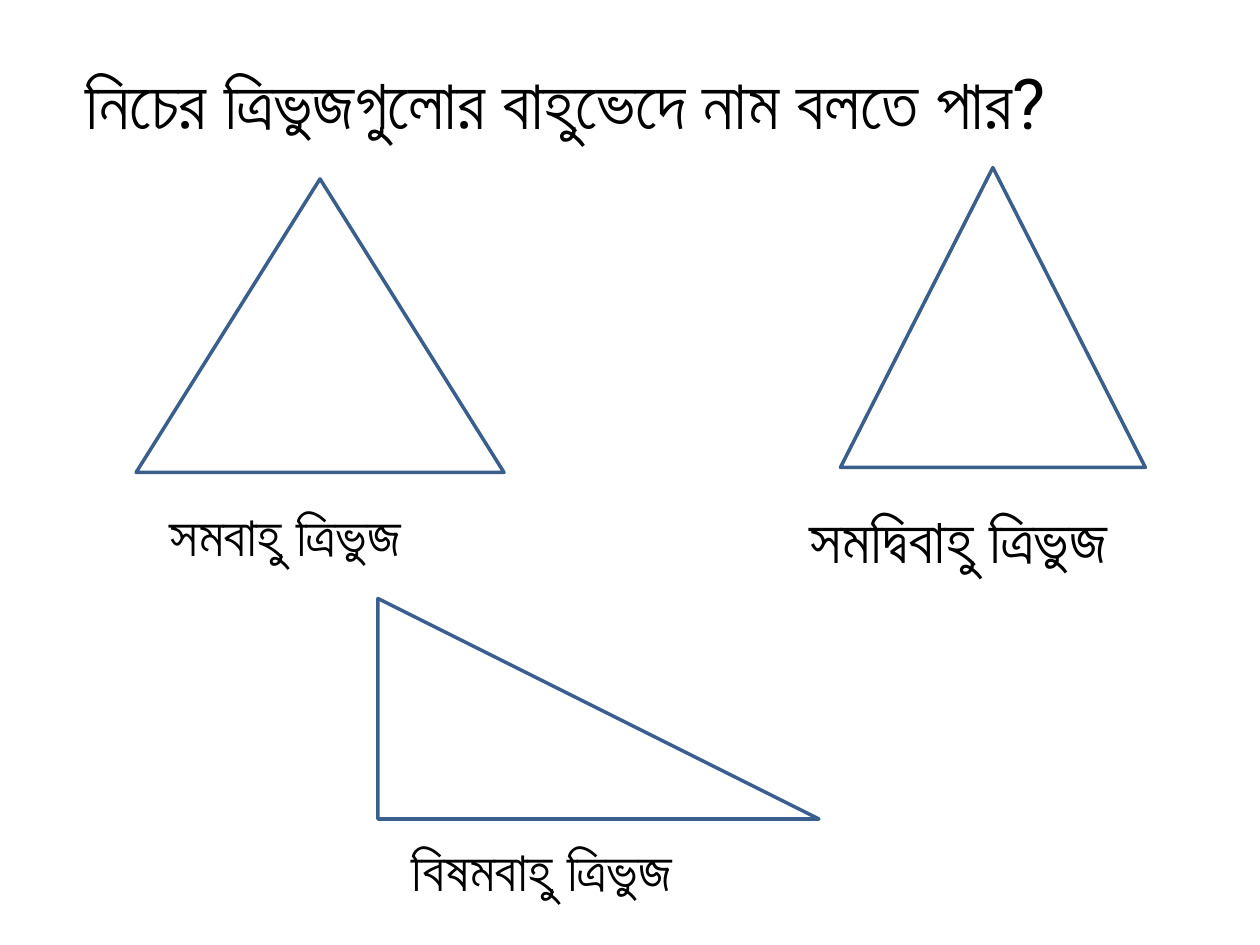
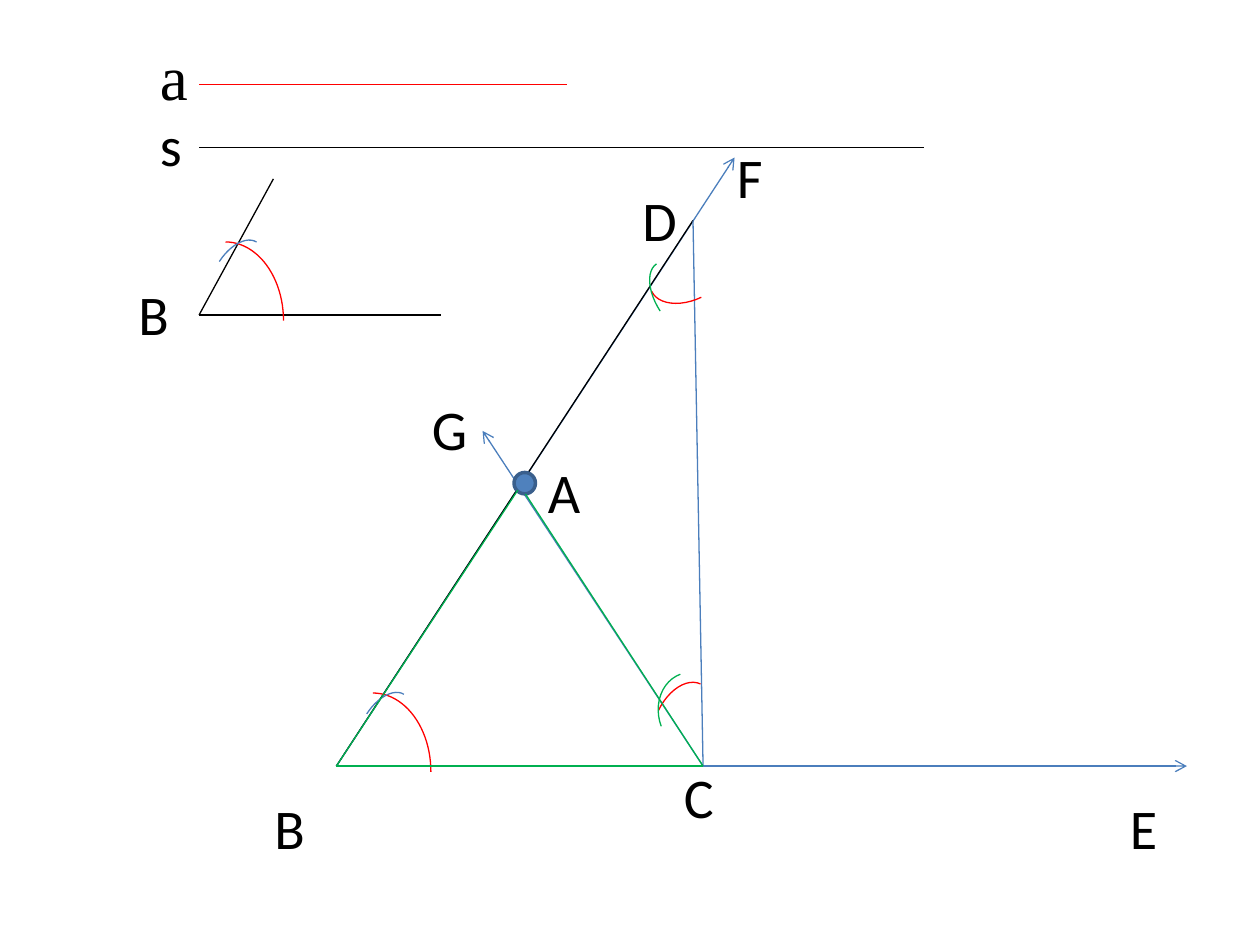
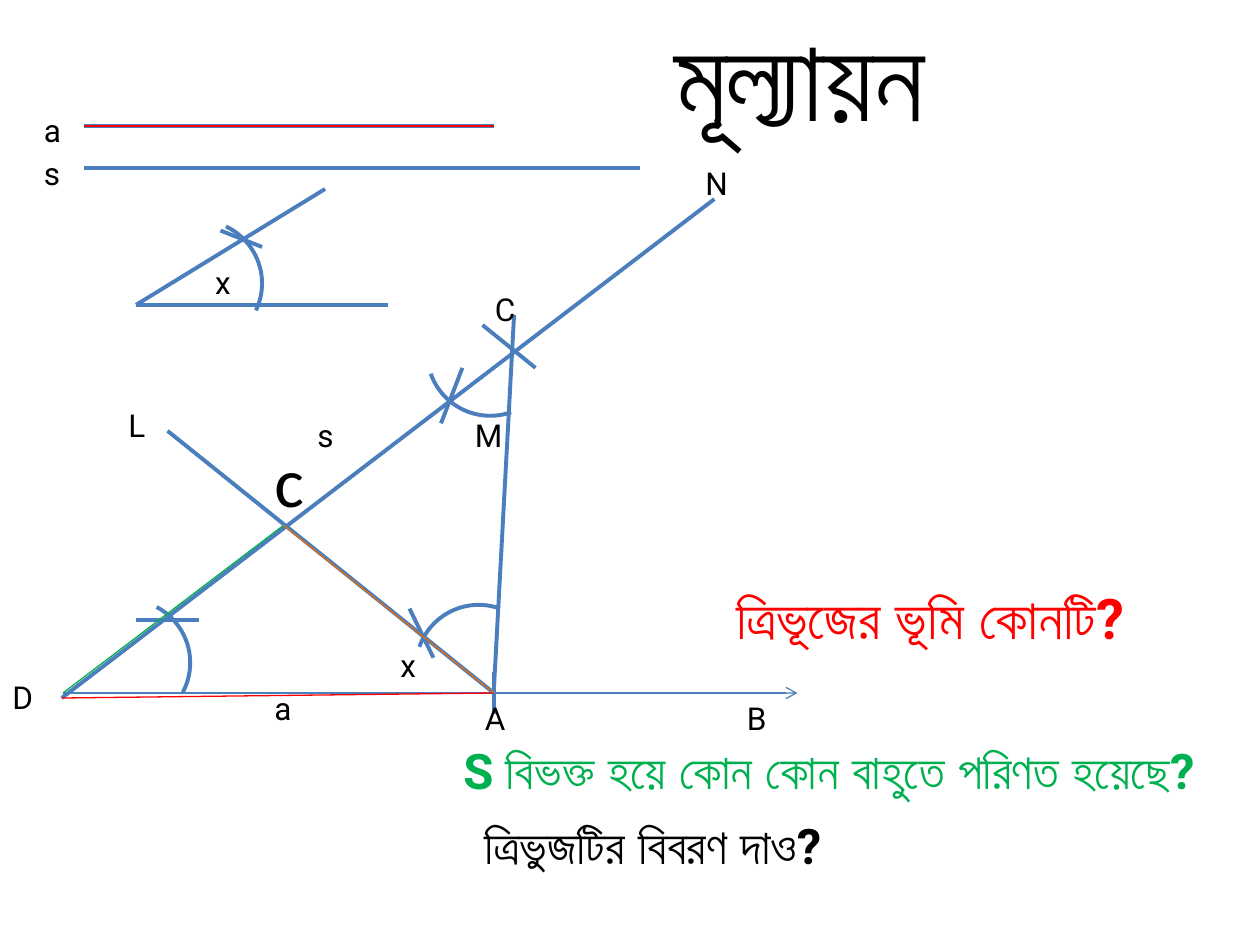
from lxml import etree
from pptx import Presentation
from pptx.dml.color import RGBColor
from pptx.enum import shapes, text
from pptx.oxml.ns import qn
from pptx.util import Inches, Pt


class Theme:
    black, white, red = "000000", "FFFFFF", "FF0000"
    green, orange = "00B050", "E46C0A"
    blue, edge, dot = "4B7EBC", "3A5F8C", "4F81BD"
    thin, mid, thick = 0.75, 2, 2.25
    small, note, label, name, head, big = 18, 28, 32, 36, 40, 66
    sans, plain, serif = "Roboto", "Calibri", "Times New Roman"


T = Theme
KIND = shapes.MSO_SHAPE

# Slide 1: triangles as kind, box; names as text, box, size
NAMES_TITLE = ("নিচের ত্রিভুজগুলোর বাহুভেদে নাম বলতে পার?", (0.58, 0.42, 8.25, 0.77), T.head)
TRIANGLES = [
    (KIND.ISOSCELES_TRIANGLE, (1.08, 1.42, 2.92, 2.33)),
    (KIND.ISOSCELES_TRIANGLE, (6.67, 1.33, 2.42, 2.38)),
    (KIND.RIGHT_TRIANGLE, (3, 4.75, 3.5, 1.75)),
]
NAMES = [
    ("সমবাহু ত্রিভুজ", (1.25, 3.92, 2.5, 0.64), T.label),
    ("সমদ্বিবাহু ত্রিভুজ", (6.33, 3.92, 3.08, 0.71), T.name),
    ("বিষমবাহু ত্রিভুজ", (3.17, 6.58, 2.58, 0.64), T.label),
]

# Slide 2: points, then lines as start, end, colour
GIVEN, B, C, D = (1.58, 2.5), (2.67, 6.08), (5.58, 6.08), (5.5, 1.75)
E, F, G = (9.42, 6.08), (5.83, 1.25), (3.83, 3.42)
DOT = (4.08, 3.75, 0.17, 0.17)
LINES = [
    ((1.58, 0.67), (4.5, 0.67), T.red),
    ((1.58, 1.17), (7.33, 1.17), T.black),
    (GIVEN, (3.5, 2.5), T.black),
    (GIVEN, (2.17, 1.42), T.black),
]
RAYS = [(B, E), (B, F), (C, G)]
BUILD = [(B, D, T.black), (D, C, T.blue)]
SIDES = [(B, (4.11, 3.89)), (B, C), (C, (4.17, 3.92))]
# Arcs as box, turn, colour
ARCS = [
    ((1.33, 1.92, 0.92, 1.25), 0, T.red),
    ((1.59, 2, 0.58, 0.33), 302.6, T.blue),
    ((2.5, 5.5, 0.92, 1.25), 0, T.red),
    ((2.76, 5.59, 0.58, 0.33), 302.6, T.blue),
    ((5.14, 1.96, 0.67, 0.42), 154.6, T.red),
    ((5.08, 5.52, 0.67, 0.42), 295.6, T.red),
    ((5.06, 2.19, 0.66, 0.36), 237, T.green),
    ((5.18, 5.38, 0.67, 0.57), 249.8, T.green),
]
LABELS = [
    ("s", 1.17, 0.83), ("B", 1, 2.17), ("B", 2.08, 6.25), ("E", 8.87, 6.25),
    ("G", 3.33, 3.08), ("A", 4.25, 3.58), ("F", 5.75, 1.08),
    ("D", 5, 1.42), ("C", 5.33, 6),
]

# Slide 3
TEST_TITLE = ("মূল্যায়ন", (5.25, 0, 2.58, 1.21), T.big)
GIVEN_X, TEST_D, TEST_A, TEST_C = (1.08, 2.42), (0.49, 5.54), (3.92, 5.5), (2.25, 4.17)
SIDE_A = ((0.67, 1), (3.92, 1))
BASE = (0.5, 5.5)
STROKES = [
    SIDE_A,
    ((0.67, 1.33), (5.08, 1.33)),
    (GIVEN_X, (3.08, 2.42)),
    (GIVEN_X, (2.58, 1.5)),
    (TEST_D, (5.67, 1.58)),
    (TEST_A, (1.33, 3.42)),
    ((3.92, 5.47), (4.08, 2.5)),
    ((3.92, 5.33), (3.92, 5.67)),
]
TICKS = [
    ((3.83, 2.58), (4.25, 2.92)), ((3.67, 2.92), (3.5, 3.36)),
    ((3.25, 4.83), (3.44, 5.22)), ((1.75, 1.83), (2.08, 1.96)),
    ((1.08, 4.92), (1.58, 4.92)),
]
# Unit arcs as left, top, turn
TURNS = [(1.08, 1.75, 25.3), (0.51, 4.76, 27.9), (3.3, 4.8, 289.5), (3.39, 2.3, 160.6)]
MARKED = [
    (TEST_D, TEST_A, T.red), (*SIDE_A, T.red),
    (BASE, TEST_C, T.green), (TEST_C, TEST_A, T.orange),
]
MARKS = [
    ("a", 0.25, 0.83), ("s", 0.25, 1.17), ("x", 1.61, 2.04), ("x", 3.08, 5.08),
    ("L", 0.92, 3.17), ("D", 0, 5.33), ("A", 3.75, 5.5), ("M", 3.67, 3.25),
    ("C", 3.83, 2.25), ("N", 5.5, 1.25), ("B", 5.83, 5.5), ("a", 2.08, 5.42),
    ("s", 2.42, 3.25),
]
ASKS = [
    ("ত্রিভূজের ভূমি কোনটি?", (5.75, 4.58, 3.58, 0.64), T.label, T.red),
    ("S বিভক্ত হয়ে কোন কোন বাহুতে পরিণত হয়েছে?", (3.58, 5.83, 6.17, 0.57), T.note, T.green),
    ("ত্রিভুজটির বিবরণ দাও?", (3.75, 6.42, 5.75, 0.57), T.note, T.black),
]


def inch(box):
    return [Inches(n) for n in box]


def pen(line, tint, width):
    line.color.rgb = RGBColor.from_string(tint)
    line.width = Pt(width)


def write(shape, words, size, font=T.sans, tint=T.black, bold=False):
    frame = shape.text_frame
    frame.text = words
    frame.word_wrap = True
    frame.auto_size = text.MSO_AUTO_SIZE.SHAPE_TO_FIT_TEXT
    frame.vertical_anchor = text.MSO_ANCHOR.TOP
    para = frame.paragraphs[0]
    para.alignment = text.PP_ALIGN.LEFT
    para.font.name, para.font.size, para.font.bold = font, Pt(size), bold
    para.font.color.rgb = RGBColor.from_string(tint)


def note(slide, words, box, size, **look):
    write(slide.shapes.add_textbox(*inch(box)), words, size, **look)


def head(slide, words, box, size):
    title = slide.shapes.title
    title.left, title.top, title.width, title.height = inch(box)
    write(title, words, size)


def draw(slide, kind, box, tint=T.edge, width=T.mid, fill=None, turn=0):
    shape = slide.shapes.add_shape(kind, *inch(box))
    shape.shadow.inherit = False
    shape.rotation = turn
    pen(shape.line, tint, width)
    if fill:
        shape.fill.solid()
        shape.fill.fore_color.rgb = RGBColor.from_string(fill)
    else:
        shape.fill.background()


def join(slide, start, end, tint=T.blue, width=T.thin, arrow=False):
    link = slide.shapes.add_connector(
        shapes.MSO_CONNECTOR.STRAIGHT, *inch(start + end))
    pen(link.line, tint, width)
    props = link._element.spPr
    if arrow:
        etree.SubElement(props.find(qn("a:ln")), qn("a:tailEnd"), type="arrow")
    etree.SubElement(props, qn("a:effectLst"))


def show_names(slide):
    head(slide, *NAMES_TITLE)
    for kind, box in TRIANGLES:
        draw(slide, kind, box, fill=T.white)
    for name in NAMES:
        note(slide, *name)


def show_build(slide):
    for line in LINES:
        join(slide, *line)
    for start, end in RAYS:
        join(slide, start, end, arrow=True)
    for line in BUILD:
        join(slide, *line)
    for box, turn, tint in ARCS:
        draw(slide, KIND.ARC, box, tint, T.thin, turn=turn)
    note(slide, "a", (1.17, 0.25, 0.33, 0.71), T.name, font=T.serif)
    for mark, x, y in LABELS:
        note(slide, mark, (x, y, 0.7, 0.64), T.label, font=T.plain)
    draw(slide, KIND.OVAL, DOT, fill=T.dot)
    for start, end in SIDES:
        join(slide, start, end, T.green)


def show_test(slide):
    head(slide, *TEST_TITLE)
    for start, end in STROKES + TICKS:
        join(slide, start, end, width=T.thick)
    for x, y, turn in TURNS:
        draw(slide, KIND.ARC, (x, y, 1, 1), T.blue, T.thick, turn=turn)
    join(slide, BASE, (6.33, 5.5), arrow=True)
    for line in MARKED:
        join(slide, *line)
    for mark, x, y in MARKS:
        note(slide, mark, (x, y, 0.4, 0.4), T.small)
    note(slide, "c", (2.08, 3.42, 0.5, 0.77), T.head, font=T.plain)
    for words, box, size, tint in ASKS:
        note(slide, words, box, size, tint=tint, bold=True)


def main():
    deck = Presentation()
    deck.slide_width, deck.slide_height = Inches(10), Inches(7.5)
    titled, blank = deck.slide_layouts[5], deck.slide_layouts[6]
    for show, layout in ((show_names, titled), (show_build, blank), (show_test, titled)):
        show(deck.slides.add_slide(layout))
    deck.save("out.pptx")


if __name__ == "__main__":
    main()
